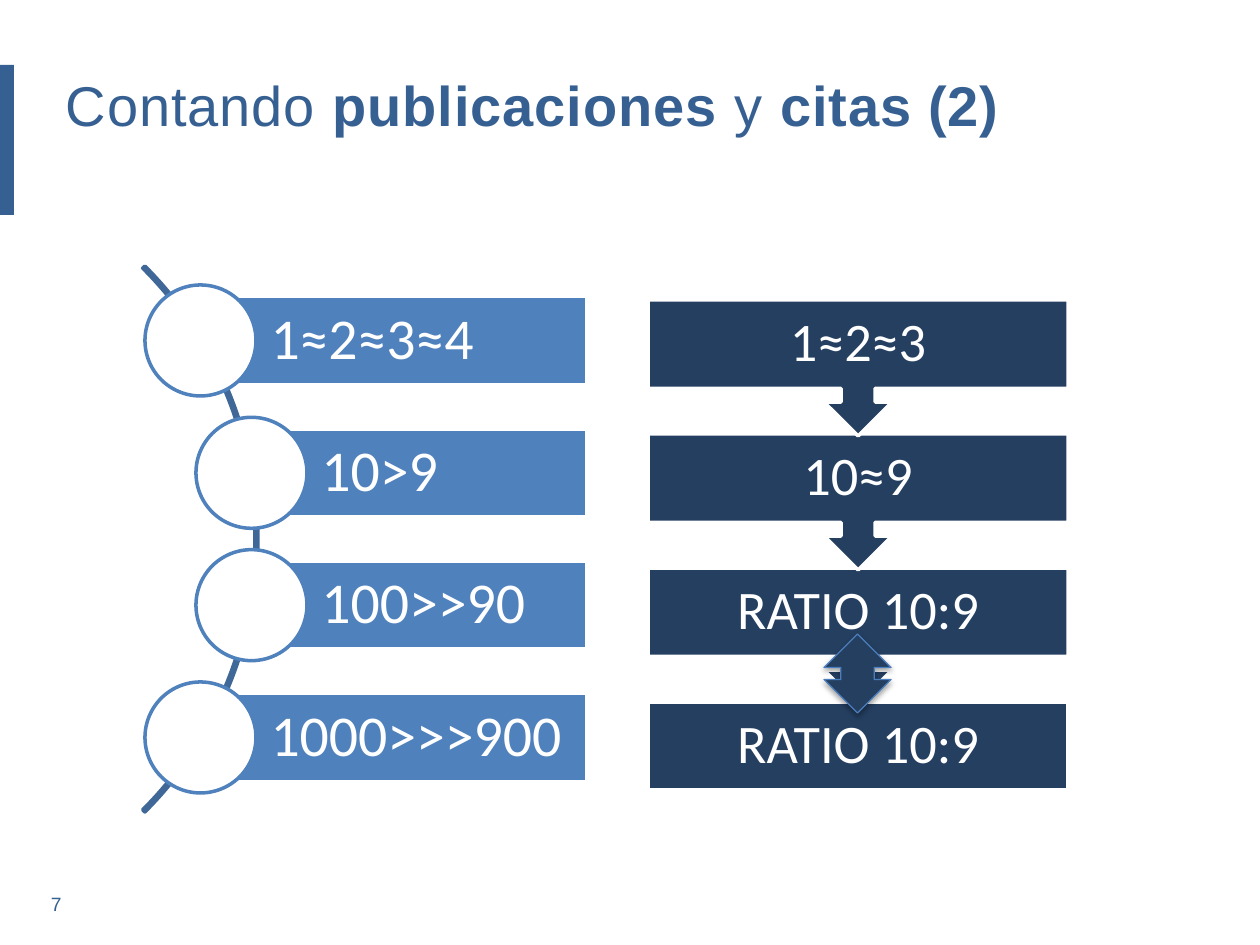
import pptx
import pptx.util
import pptx.dml.color
import pptx.enum.shapes
import pptx.enum.text
import pptx.oxml.ns
from lxml import etree

PX = 914400 / 126
SHAPE = pptx.enum.shapes.MSO_SHAPE
ALIGN = pptx.enum.text.PP_ALIGN
ANCHOR = pptx.enum.text.MSO_ANCHOR
FIT = pptx.enum.text.MSO_AUTO_SIZE.SHAPE_TO_FIT_TEXT
BLUE, MID, DARK, WHITE = "376092", "4F81BD", "253F61", "FFFFFF"


def emu(*lengths):
    return [round(n * PX) for n in lengths]


def rgb(value):
    return pptx.dml.color.RGBColor.from_string(value)


def add_shape(shapes, kind, box, fill=None, line=None, width=2):
    sp = shapes.add_shape(kind, *emu(*box))
    sp.shadow.inherit = False
    if fill:
        sp.fill.solid()
        sp.fill.fore_color.rgb = rgb(fill)
    else:
        sp.fill.background()
    if line:
        sp.line.color.rgb = rgb(line)
        sp.line.width = pptx.util.Pt(width)
    else:
        sp.line.fill.background()
    return sp


def set_frame(tf, margins, anchor=ANCHOR.TOP, **extra):
    left, top, right, bottom = emu(*margins)
    values = dict(margin_left=left, margin_top=top, margin_right=right,
                  margin_bottom=bottom, vertical_anchor=anchor, word_wrap=True, **extra)
    for name, value in values.items():
        setattr(tf, name, value)


def add_run(p, text, size, color, font="Calibri", bold=False, spacing=0):
    r = p.add_run()
    r.text = text
    for name, value in dict(name=font, size=pptx.util.Pt(size), bold=bold).items():
        setattr(r.font, name, value)
    r.font.color.rgb = rgb(color)
    if spacing:  # hundredths of a point
        r._r.get_or_add_rPr().set("spc", str(spacing))


def add_label(shapes, box, text, size, margins, align):
    tf = shapes.add_textbox(*emu(*box)).text_frame
    set_frame(tf, margins, ANCHOR.MIDDLE)
    p = tf.paragraphs[0]
    p.alignment = align
    p.line_spacing = 0.9
    add_run(p, text, size, WHITE)


def add_title(s, box):
    title = s.shapes.title
    title.left, title.top, title.width, title.height = emu(*box)
    tf = title.text_frame
    set_frame(tf, (13, 6, 13, 6), auto_size=FIT)
    p = tf.paragraphs[0]
    p.alignment = ALIGN.LEFT
    for text, bold in (("Contando ", False), ("publicaciones", True),
                       (" y ", False), ("citas (2)", True)):
        add_run(p, text, 32, BLUE, "Arial", bold, 50)


def add_page_number(s, box, number):
    tf = s.shapes.add_textbox(*emu(*box)).text_frame
    set_frame(tf, (13, 6, 13, 6), auto_size=FIT)
    add_run(tf.paragraphs[0], number, 11, BLUE, "Arial", spacing=100)


def add_curved_list(s, box, texts):
    """Bars with circles strung along an arc."""
    x, y, w, h = box
    shapes = s.shapes.add_group_shape().shapes
    bar_h, circle, indent = 88, 111, 51
    step = (h - circle) / (len(texts) - 1)

    # Arc from -45 to 45 degrees, its rightmost point just past the inner circles
    size = 772
    arc = add_shape(shapes, SHAPE.BLOCK_ARC,
                    (x + 113 - size, y + h / 2 - size / 2, size, size), line="3F6797")
    for i, value in enumerate((189, 27, 0.004)):
        arc.adjustments[i] = value

    for i, text in enumerate(texts):
        left = x + (0 if i in (0, len(texts) - 1) else indent)
        top = y + i * step
        center = left + circle / 2
        bar = (center, top + (circle - bar_h) / 2, x + w - center, bar_h)
        add_shape(shapes, SHAPE.RECTANGLE, bar, MID, WHITE)
        add_label(shapes, bar, text, 33, (70, 11, 11, 11), ALIGN.LEFT)
        add_shape(shapes, SHAPE.OVAL, (left, top, circle, circle), WHITE, MID)


def add_arrow_process(s, box, texts):
    """Stacked boxes, each pointing down to the next one."""
    x, y, w, h = box
    shapes = s.shapes.add_group_shape().shapes
    bar_h, callout_h = 88, 136
    last = len(texts) - 1
    step = (h - bar_h) / last
    for i in range(last, -1, -1):
        top = y + i * step
        if i == last:
            add_shape(shapes, SHAPE.RECTANGLE, (x, top, w, bar_h), DARK, WHITE)
        else:
            sp = add_shape(shapes, SHAPE.UP_ARROW_CALLOUT, (x, top, w, callout_h), DARK, WHITE)
            sp.rotation = 180
        add_label(shapes, (x, top, w, bar_h), texts[i], 31, (30, 30, 30, 30), ALIGN.CENTER)


def add_double_arrow(s, box):
    sp = add_shape(s.shapes, SHAPE.UP_DOWN_ARROW, box, DARK, "4B7EBC", 0.75)
    # Soft shadow below
    qn = pptx.oxml.ns.qn
    effects = sp._element.spPr.find(qn("a:effectLst"))
    shadow = etree.SubElement(effects, qn("a:outerShdw"), blurRad="40000", dist="23000",
                              dir="5400000", rotWithShape="0")
    color = etree.SubElement(shadow, qn("a:srgbClr"), val="000000")
    etree.SubElement(color, qn("a:alpha"), val="35000")


def main():
    prs = pptx.Presentation()
    prs.slide_width, prs.slide_height = emu(1260, 945)
    s = prs.slides.add_slide(prs.slide_layouts[5])

    add_page_number(s, (38, 886, 1166, 37), "7")
    add_shape(s.shapes, SHAPE.RECTANGLE, (0, 65, 14, 150), BLUE)
    add_curved_list(s, (145, 285, 442, 508), ["1≈2≈3≈4", "10>9", "100>>90", "1000>>>900"])
    add_arrow_process(s, (648, 300, 420, 490), ["1≈2≈3", "10≈9", "RATIO 10:9", "RATIO 10:9"])
    add_title(s, (53, 64, 1154, 81))
    add_double_arrow(s, (824, 634, 67, 79))
    prs.save("out.pptx")


if __name__ == "__main__":
    main()
